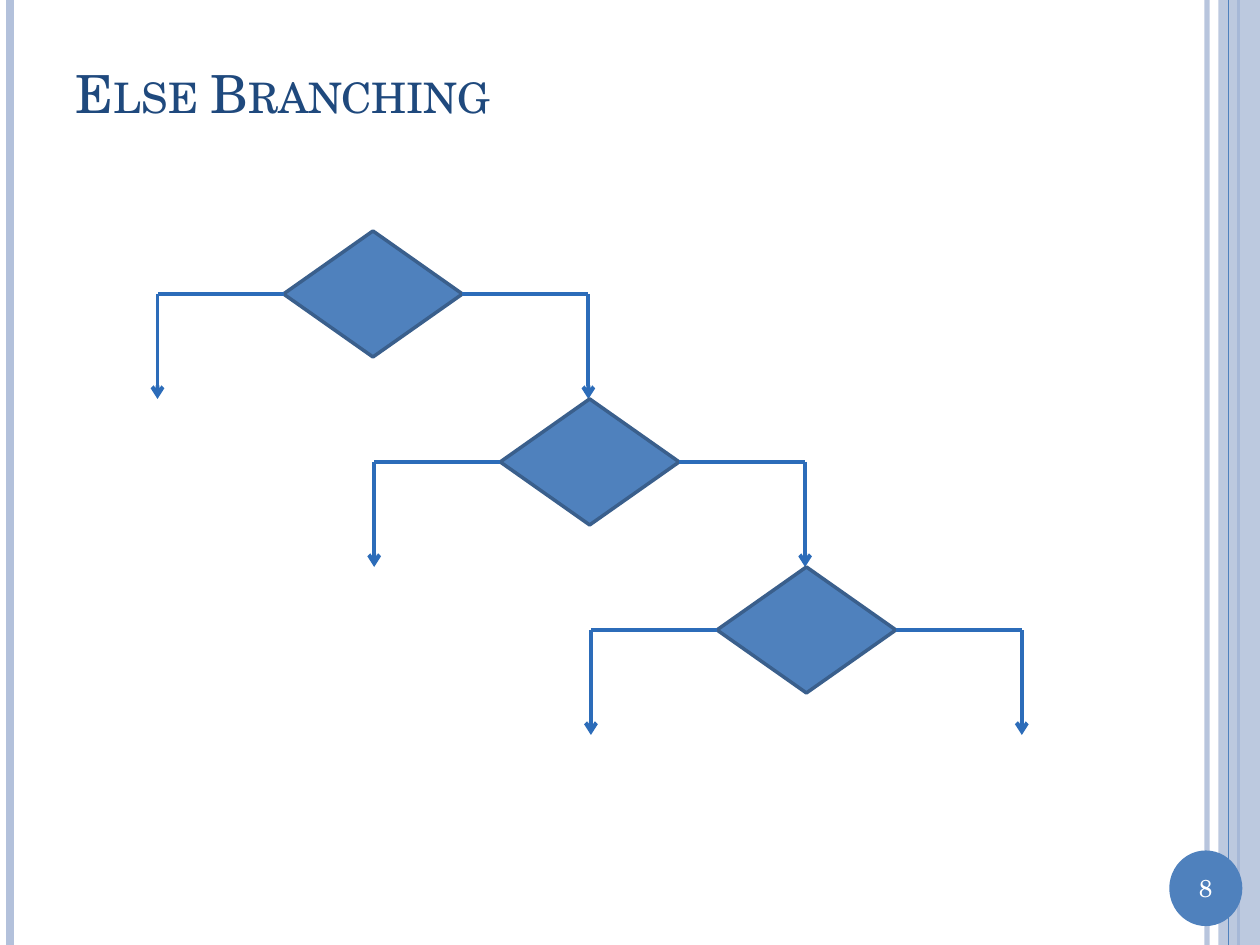
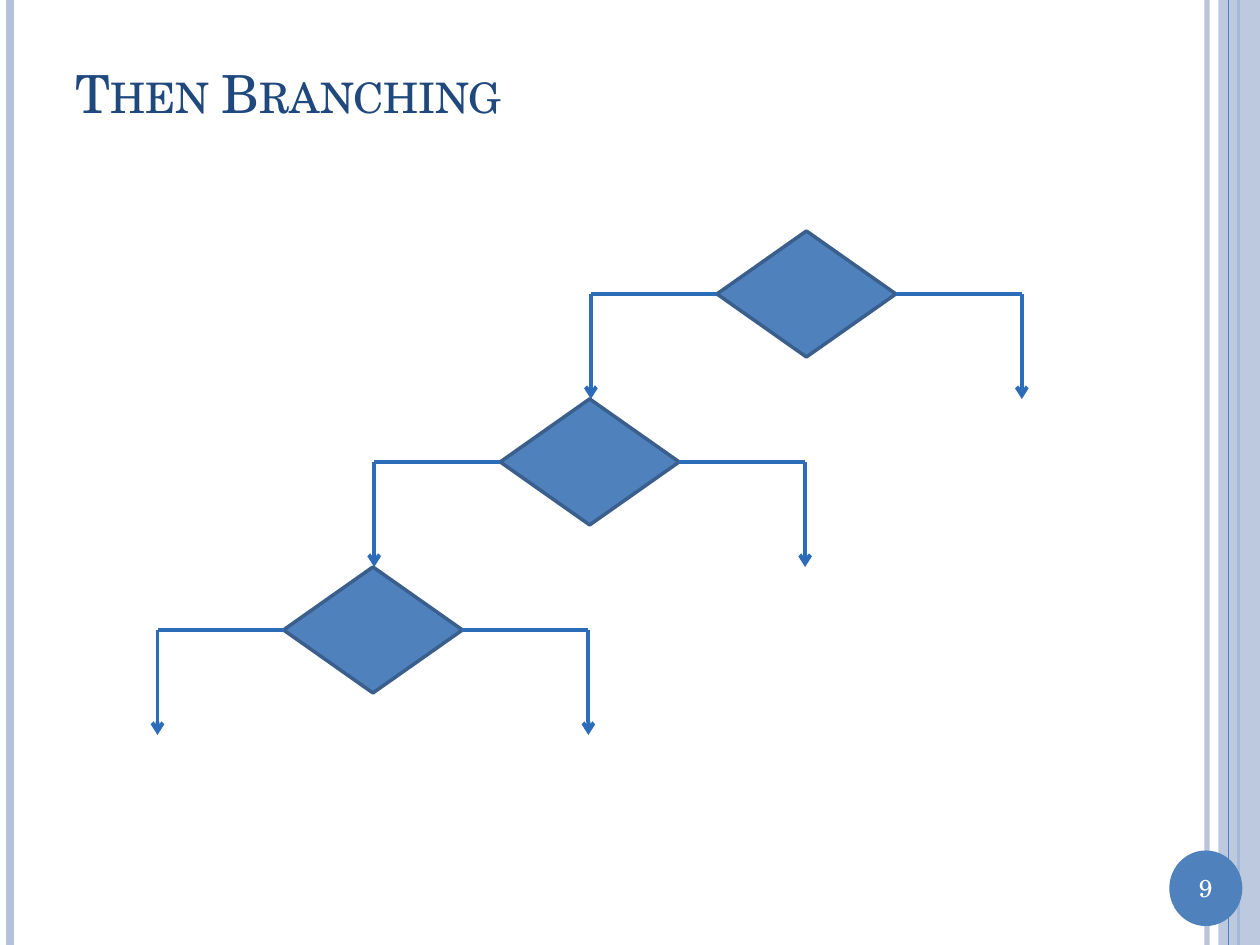
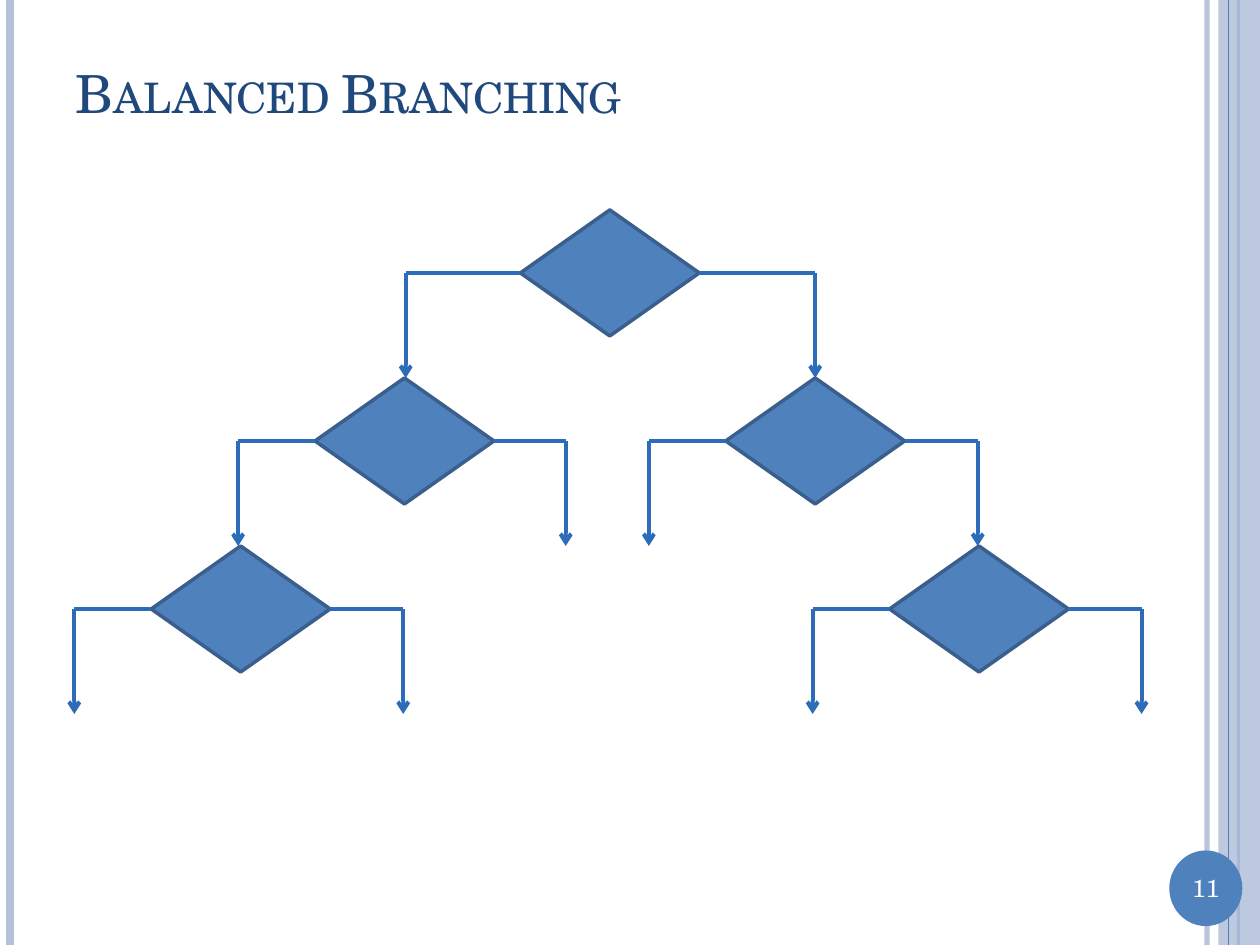
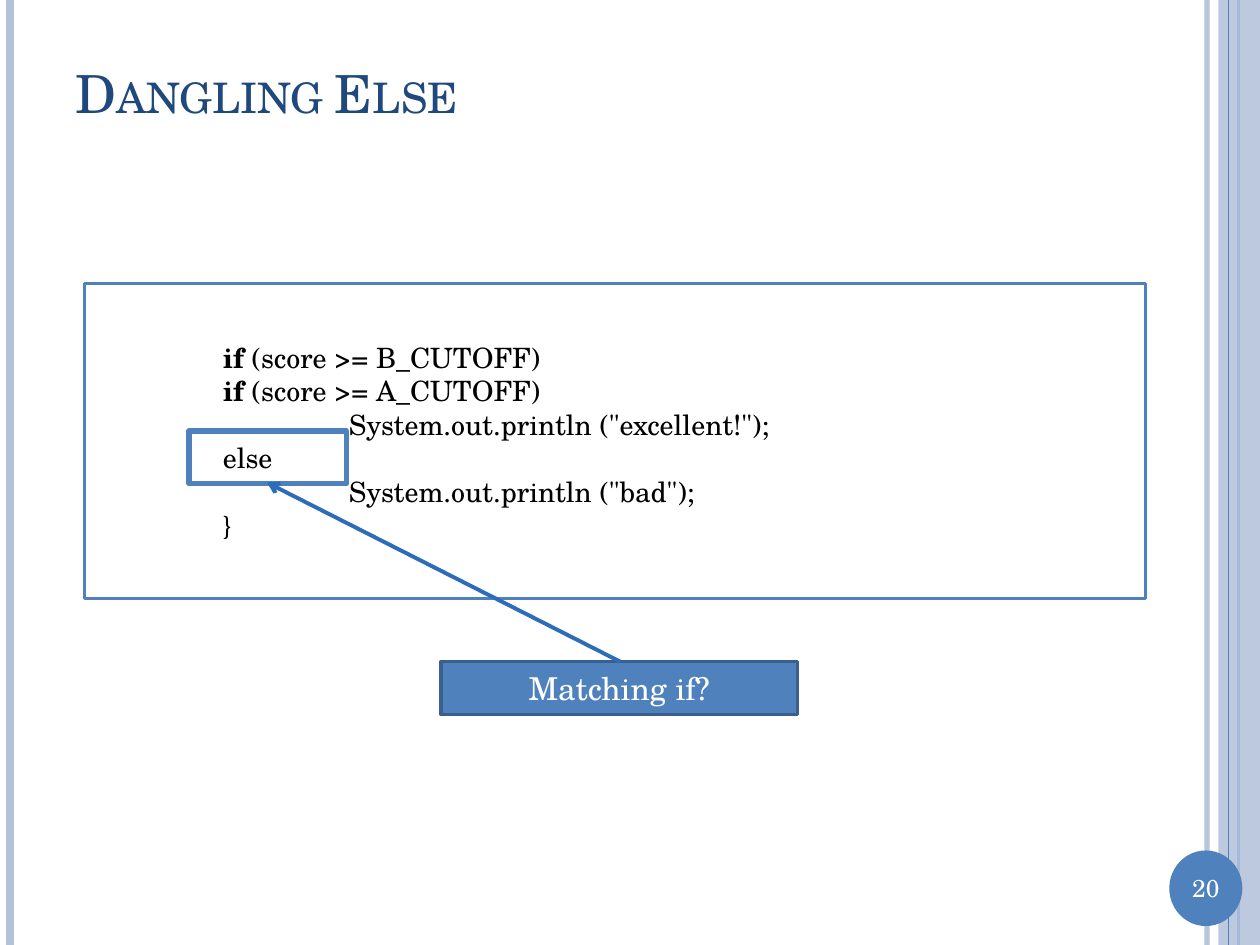
import pptx
import pptx.dml.color
import pptx.enum.shapes
import pptx.enum.text
import pptx.oxml
import pptx.oxml.ns
import pptx.util
from lxml import etree

Inches = pptx.util.Inches
Pt = pptx.util.Pt
RGBColor = pptx.dml.color.RGBColor
Shape = pptx.enum.shapes.MSO_SHAPE
Align = pptx.enum.text.PP_ALIGN
Anchor = pptx.enum.text.MSO_ANCHOR
qn = pptx.oxml.ns.qn

BLUE = RGBColor(0x4F, 0x81, 0xBD)
EDGE = RGBColor(0x3A, 0x5F, 0x8C)
ARROW = RGBColor(0x2C, 0x6C, 0xB9)
BAND = RGBColor(0xB3, 0xC1, 0xDB)
NAVY = RGBColor(0x1F, 0x49, 0x7D)
WHITE = RGBColor(0xFF, 0xFF, 0xFF)
BLACK = RGBColor(0x00, 0x00, 0x00)

FONT = "TeX Gyre Schola"
TITLE = {"size": Pt(30), "name": FONT}
NUMBER = {"size": Pt(14), "name": FONT}
CODE = {"size": Pt(16), "name": FONT}
LABEL = {"size": Pt(18), "name": FONT}

DIAMOND_W, DIAMOND_H = 1.42, 1
LEVEL_H = 4 / 3
STAIR_TOP, STAIR_LEFT, STAIR_STEP = 11 / 6, 2.25, 1.72
TREE_TOP = 5 / 3
TREE = [
    (4.13, 0, 0.91, 0.92),
    (2.5, 1, 0.61, 0.57),
    (5.76, 1, 0.61, 0.58),
    (7.06, 2, 0.61, 0.58),
    (1.2, 2, 0.61, 0.58),
]
CODE_LINES = [
    (1, [("if", True), (" (score >= B_CUTOFF)", False)]),
    (1, [("if", True), (" (score >= A_CUTOFF)", False)]),
    (2, [('System.out.println ("excellent!");', False)]),
    (1, [("else", False)]),
    (2, [('System.out.println ("bad");', False)]),
    (1, [("}", False)]),
]


class Deck:
    """Hold the presentation style and the current slide."""

    def __init__(self):
        self.prs = pptx.Presentation()
        self.prs.slide_width = Inches(10)
        self.prs.slide_height = Inches(7.5)
        self.s = None

    def slide(self, title, number):
        """Start a slide with its bands, number badge and title."""
        self.s = self.prs.slides.add_slide(self.prs.slide_layouts[6])
        self.line(9.58, 0, 9.58, 7.5, BAND, 3, alpha=93)
        self.line(0.08, 0, 0.08, 7.5, BAND, 4.5)
        self.line(9.83, 0, 9.83, 7.5, BLUE, 1.5)
        self.shape(Shape.RECTANGLE, 9.67, 0, 0.33, 7.5, BAND, alpha=87)
        self.line(9.75, 0, 9.75, 7.5, BLUE, 0.75)
        self.shape(Shape.OVAL, 9.28, 6.75, 0.58, 0.6, BLUE)
        self.textbox(number, 9.28, 6.88, 0.58, 0.34, NUMBER, WHITE, Align.CENTER)
        r = self.textbox(title, 0.5, 0.3, 8.67, 0.87, TITLE, NAVY, anchor=Anchor.MIDDLE)
        r.font._element.set("cap", "small")

    def fade(self, sp, alpha):
        """Set the opacity, in percent, of the first solid colour of a shape."""
        clr = next(sp._element.spPr.iter(qn("a:srgbClr")))
        etree.SubElement(clr, qn("a:alpha")).set("val", str(alpha * 1000))

    def line(self, x1, y1, x2, y2, color=ARROW, width=2.25, alpha=None, arrow=False):
        """Draw a straight line, with an arrowhead at its end if asked."""
        sp = self.s.shapes.add_connector(
            pptx.enum.shapes.MSO_CONNECTOR.STRAIGHT,
            Inches(x1), Inches(y1), Inches(x2), Inches(y2))
        sp.line.color.rgb = color
        sp.line.width = Pt(width)
        if alpha:
            self.fade(sp, alpha)
        if arrow:
            etree.SubElement(sp.line._get_or_add_ln(), qn("a:tailEnd")).set("type", "arrow")
        etree.SubElement(sp._element.spPr, qn("a:effectLst"))

    def shape(self, kind, x, y, w, h, fill=None, edge=None, width=2, alpha=None):
        """Draw a preset shape without a shadow."""
        sp = self.s.shapes.add_shape(kind, Inches(x), Inches(y), Inches(w), Inches(h))
        sp.shadow.inherit = False
        if fill is None:
            sp.fill.background()
        else:
            sp.fill.solid()
            sp.fill.fore_color.rgb = fill
        if alpha:
            self.fade(sp, alpha)
        if edge is None:
            sp.line.fill.background()
        else:
            sp.line.color.rgb = edge
            sp.line.width = Pt(width)
        return sp

    def run(self, p, text, style, color, bold=False):
        """Add a formatted run to a paragraph."""
        r = p.add_run()
        r.text = text
        for name, value in {**style, "bold": bold}.items():
            setattr(r.font, name, value)
        r.font.color.rgb = color
        return r

    def textbox(self, text, x, y, w, h, style, color, align=Align.LEFT, anchor=Anchor.TOP):
        """Add a one-line text box and return its run."""
        sp = self.s.shapes.add_textbox(Inches(x), Inches(y), Inches(w), Inches(h))
        tf = sp.text_frame
        tf.word_wrap = True
        tf.vertical_anchor = anchor
        p = tf.paragraphs[0]
        p.alignment = align
        return self.run(p, text, style, color)

    def fill_text(self, sp, lines, style, color, align):
        """Write lines of (indent in inches, runs) into a shape."""
        tf = sp.text_frame
        tf.word_wrap = True
        tf.vertical_anchor = Anchor.MIDDLE
        for i, (indent, runs) in enumerate(lines):
            p = tf.add_paragraph() if i else tf.paragraphs[0]
            p.alignment = align
            p._p.get_or_add_pPr().set("marL", str(Inches(indent)))
            for text, bold in runs:
                self.run(p, text, style, color, bold)

    def decision(self, x, y, reach_left=1, reach_right=1):
        """Draw a diamond with a branch going down on either side."""
        self.shape(Shape.FLOWCHART_DECISION, x, y, DIAMOND_W, DIAMOND_H, BLUE, EDGE)
        middle = y + DIAMOND_H / 2
        right = x + DIAMOND_W
        for start, end in ((x, x - reach_left), (right, right + reach_right)):
            self.line(start, middle, end, middle)
            self.line(end, middle, end, y + LEVEL_H, arrow=True)

    def staircase(self, columns):
        """Draw one decision per level in the given columns."""
        for level, column in enumerate(columns):
            self.decision(STAIR_LEFT + STAIR_STEP * column, STAIR_TOP + LEVEL_H * level)


def main():
    """Build the four slides."""
    deck = Deck()

    deck.slide("Else Branching", "8")
    deck.staircase((0, 1, 2))

    deck.slide("Then Branching", "9")
    deck.staircase((2, 1, 0))

    deck.slide("Balanced Branching", "11")
    for x, level, reach_left, reach_right in TREE:
        deck.decision(x, TREE_TOP + LEVEL_H * level, reach_left, reach_right)

    deck.slide("Dangling Else", "20")
    code = deck.shape(Shape.RECTANGLE, 0.67, 2.25, 8.42, 2.5, WHITE, BLUE)
    deck.fill_text(code, CODE_LINES, CODE, BLACK, Align.LEFT)
    question = deck.shape(Shape.RECTANGLE, 3.5, 5.25, 2.83, 0.42, BLUE, EDGE)
    deck.fill_text(question, [(0, [("Matching if?", False)])], LABEL, WHITE, Align.CENTER)
    deck.shape(Shape.RECTANGLE, 1.5, 3.42, 1.25, 0.42, edge=BLUE, width=3)
    deck.line(4.92, 5.25, 2.12, 3.83, arrow=True)

    deck.prs.save("out.pptx")


if __name__ == "__main__":
    main()
